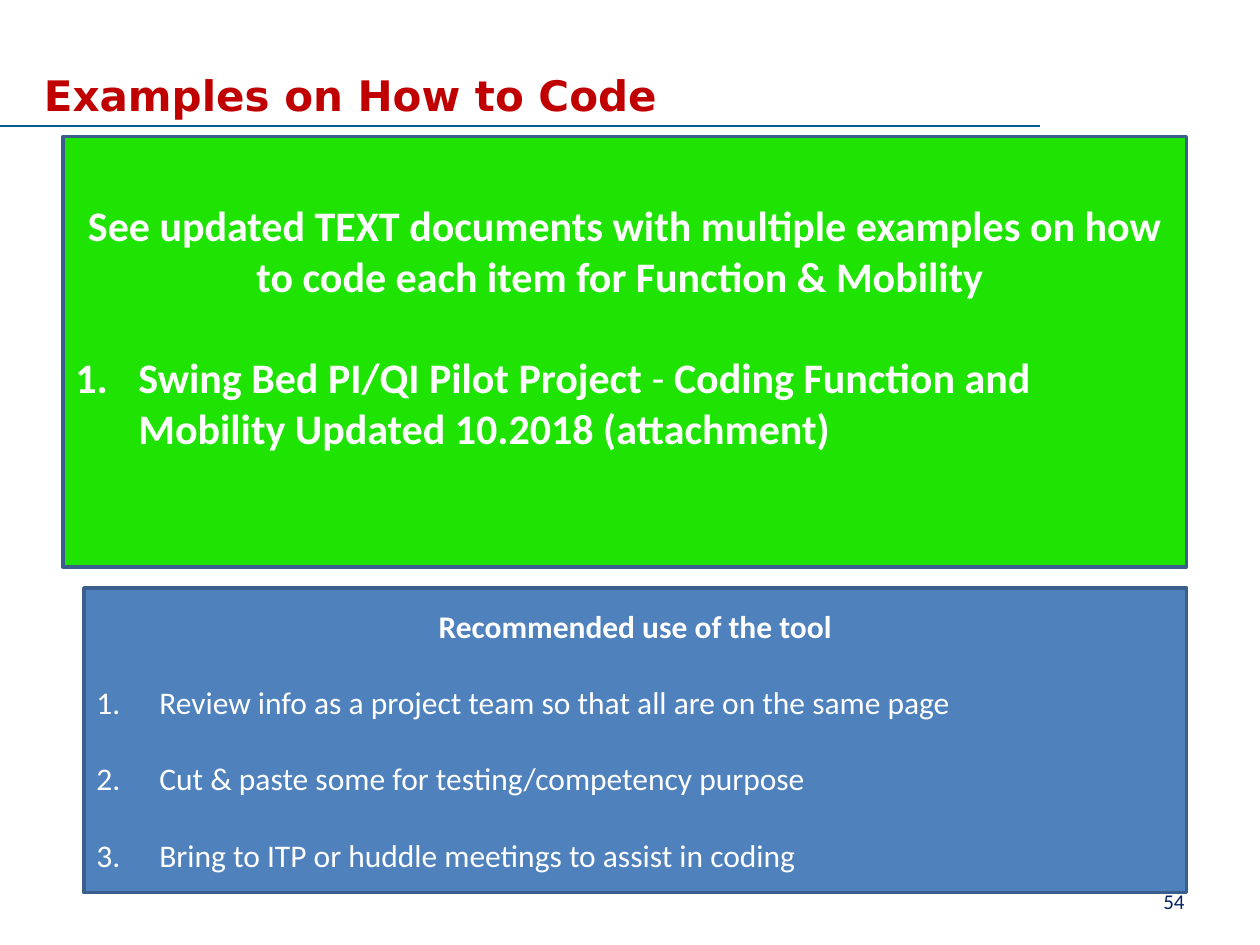
from dataclasses import dataclass

from lxml.etree import SubElement
from pptx import Presentation
from pptx.dml.color import RGBColor as Rgb
from pptx.enum.shapes import MSO_CONNECTOR as Conn, MSO_SHAPE as Shape
from pptx.enum.text import MSO_ANCHOR as Anchor, PP_ALIGN as Align
from pptx.oxml.ns import qn
from pptx.util import Inches, Pt


@dataclass(frozen=True)
class Theme:
    head: str = "C00000"
    rule: str = "005B99"
    page: str = "002060"
    green: str = "1EE303"
    blue: str = "4F81BD"
    edge: str = "3A5F8C"
    white: str = "FFFFFF"
    font: str = "Calibri"
    title: str = "DejaVu Sans"
    big: int = 24
    mid: int = 18
    small: int = 12
    lead: float = 1.22  # line height as a share of the type size


T = Theme()


def grid(*cells):
    """Lengths on a grid of 120 columns by 90 rows, 12 to the inch."""
    return [Inches(c / 12) for c in cells]


def add_run(para, text, size, color, bold=False, font=T.font):
    run = para.add_run()
    run.text = text
    face = run.font
    face.name, face.size, face.bold = font, Pt(size), bold
    face.color.rgb = Rgb.from_string(color)


def number(para):
    props = para._p.get_or_add_pPr()
    props.set("marL", str(Inches(0.5)))
    props.set("indent", str(Inches(-0.5)))
    SubElement(props, qn("a:buFont"), typeface="+mj-lt")
    SubElement(props, qn("a:buAutoNum"), type="arabicPeriod")


def add_label(slide, cells, text, size, color, **face):
    frame = slide.shapes.add_textbox(*grid(*cells)).text_frame
    frame.word_wrap = True
    add_run(frame.paragraphs[0], text, size, color, **face)
    return frame


def add_rule(slide, start, end):
    line = slide.shapes.add_connector(Conn.STRAIGHT, *grid(*start, *end))
    line.line.color.rgb = Rgb.from_string(T.rule)
    line.line.width = Pt(0.75)
    SubElement(line._element.spPr, qn("a:effectLst"))


def add_panel(slide, cells, fill, size, head, items):
    """A box with a centred heading and numbered items, one line apart."""
    box = slide.shapes.add_shape(Shape.RECTANGLE, *grid(*cells))
    box.shadow.inherit = False
    box.fill.solid()
    box.fill.fore_color.rgb = Rgb.from_string(fill)
    box.line.color.rgb = Rgb.from_string(T.edge)
    box.line.width = Pt(2)
    frame = box.text_frame
    frame.word_wrap = True
    frame.vertical_anchor = Anchor.MIDDLE
    para = frame.paragraphs[0]
    para.alignment = Align.CENTER
    add_run(para, head, size, T.white, True)
    for item in items:
        para = frame.add_paragraph()
        para.alignment = Align.LEFT
        para.space_before = Pt(round(size * T.lead, 1))
        number(para)
        for text, bold in item:
            add_run(para, text, size, T.white, bold)
    return frame


def main():
    deck = Presentation()
    deck.slide_width, deck.slide_height = grid(120, 90)
    slide = deck.slides.add_slide(deck.slide_layouts[6])

    # Title and rule
    add_rule(slide, (0, 12), (99, 12))
    add_label(slide, (3, 6, 114, 5), "Examples on How to Code",
              T.big, T.head, bold=True, font=T.title)

    # Page number
    page = add_label(slide, (86, 83.4, 28, 4.8), "54", T.small, T.page)
    page.vertical_anchor = Anchor.MIDDLE
    page.paragraphs[0].alignment = Align.RIGHT

    # Documents, raised to leave one line free below
    docs = add_panel(
        slide, (6, 13, 107, 41), T.green, T.big,
        "See updated TEXT documents with multiple examples on "
        "how to code each item for Function & Mobility ",
        [[("Swing Bed PI/QI Pilot Project", True), (" - ", False),
          ("Coding Function and Mobility Updated 10.2018 (attachment)", True)]])
    docs.margin_bottom += Pt(T.big * T.lead)

    # Use of the tool
    steps = ["Review info as a project team so that all are on the same page",
             "Cut & paste some for testing/competency purpose",
             "Bring to ITP or huddle meetings to assist in coding"]
    add_panel(slide, (8, 56, 105, 29), T.blue, T.mid,
              "Recommended use of the tool", [[(step, False)] for step in steps])

    deck.save("out.pptx")


if __name__ == "__main__":
    main()
